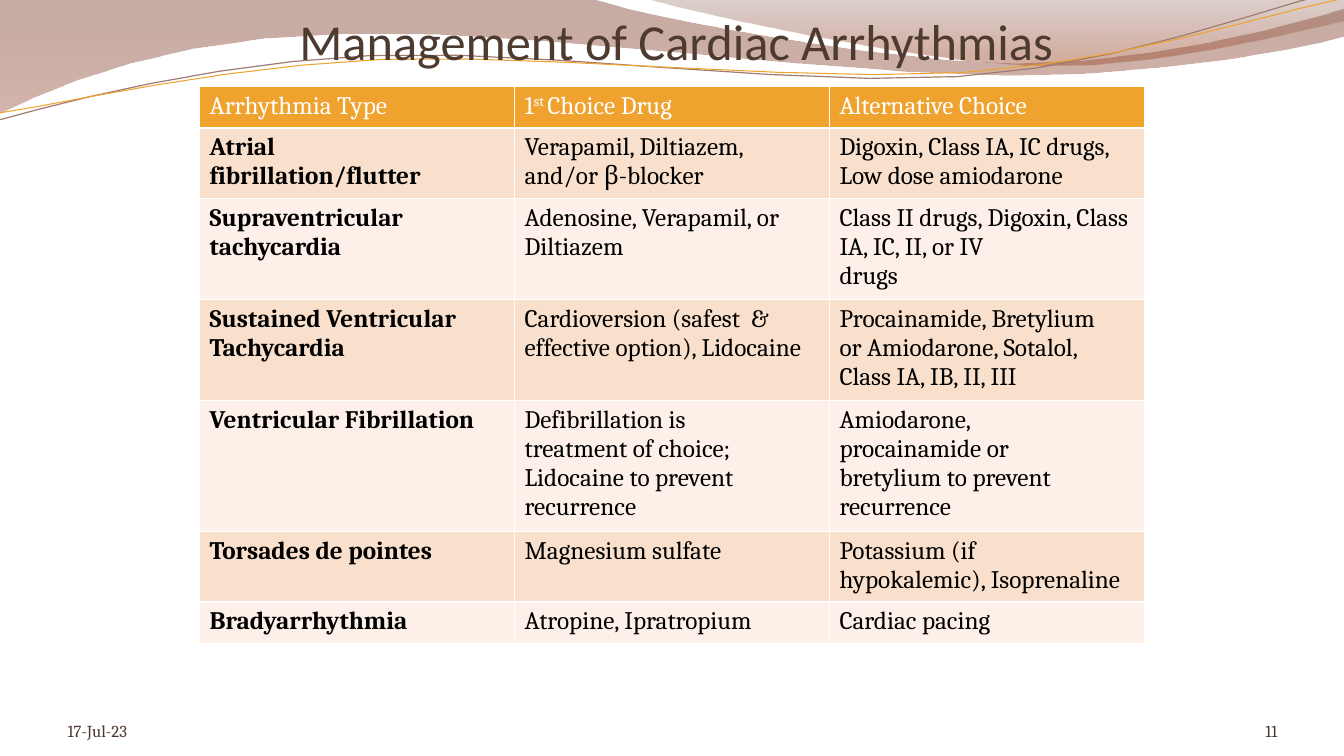
from lxml.etree import SubElement
from pptx import Presentation
from pptx.dml.color import RGBColor
from pptx.enum.text import MSO_ANCHOR, PP_ALIGN
from pptx.oxml.ns import qn
from pptx.util import Inches, Pt

WHITE = RGBColor(0xFF, 0xFF, 0xFF)
BLACK = RGBColor(0x00, 0x00, 0x00)
ORANGE = RGBColor(0xF0, 0xA2, 0x2E)
PEACH = RGBColor(0xF9, 0xE0, 0xCD)
CREAM = RGBColor(0xFC, 0xF0, 0xE8)
TITLE_BROWN = RGBColor(0x4E, 0x3B, 0x30)
FOOTER_BROWN = RGBColor(0x4B, 0x38, 0x2E)
MAUVE = RGBColor(0xA0, 0x7B, 0x71)
DARK_RUST = RGBColor(0x81, 0x47, 0x33)
ROSE = RGBColor(0xB1, 0x76, 0x67)
TAUPE = RGBColor(0x8C, 0x63, 0x59)
RUST = RGBColor(0xA1, 0x51, 0x35)
STEPS = 6  # straight pieces per curve

prs = Presentation()
prs.slide_width, prs.slide_height = Inches(13.33), Inches(7.5)
s = prs.slides.add_slide(prs.slide_layouts[6])


def add_curve(start, segments, close):
    """Draw an outline from line ends (2 numbers) and Bezier curves (6 numbers)."""
    points, (x0, y0) = [], start
    for seg in segments:
        x3, y3 = seg[-2:]
        if len(seg) == 2:
            points.append((x3, y3))
        else:
            x1, y1, x2, y2 = seg[:4]
            for i in range(1, STEPS + 1):
                t = i / STEPS
                a, b, c, d = (1 - t) ** 3, 3 * t * (1 - t) ** 2, 3 * t * t * (1 - t), t ** 3
                points.append((a * x0 + b * x1 + c * x2 + d * x3,
                               a * y0 + b * y1 + c * y2 + d * y3))
        x0, y0 = x3, y3
    builder = s.shapes.build_freeform(Inches(start[0]), Inches(start[1]))
    builder.add_line_segments([(Inches(x), Inches(y)) for x, y in points], close=close)
    sp = builder.convert_to_shape()
    sp.shadow.inherit = False
    return sp


def add_text(text, left, top, width, height, font, size, color, align):
    sp = s.shapes.add_textbox(Inches(left), Inches(top), Inches(width), Inches(height))
    tf = sp.text_frame
    tf.word_wrap = True
    tf.vertical_anchor = MSO_ANCHOR.BOTTOM
    tf.margin_left = tf.margin_right = tf.margin_top = tf.margin_bottom = 0
    tf.text = text
    p = tf.paragraphs[0]
    p.alignment = align
    f = p.runs[0].font
    f.name, f.size, f.color.rgb = font, Pt(size), color
    return tf


# Translucent waves: start, segments, gradient stops (position, colour, opacity %)
waves = [
    ((0, 0), [(5.87, -0.01), (6.34, 0.17, 8.85, 0.63, 10.11, 0.63),
              (11.38, 0.63, 12.78, 0.26, 13.33, 0.09), (13.35, 0.36),
              (13.11, 0.44, 11.6, 0.76, 9.94, 0.75),
              (8.29, 0.75, 5.09, 0.28, 3.43, 0.34),
              (1.72, 0.36, 0.61, 0.83, -0.01, 1.13)],
     [(0, DARK_RUST, 45), (1, ROSE, 55)]),
    ((6.39, -0.01), [(6.79, 0.11, 9.09, 0.62, 10.25, 0.65),
                     (11.41, 0.69, 12.82, 0.32, 13.33, 0.21), (13.33, 0)],
     [(0, TAUPE, 30), (0.8, RUST, 45)]),
]
for start, segments, stops in waves:
    sp = add_curve(start, segments, True)
    sp.line.fill.background()
    sp.fill.gradient()
    sp.fill.gradient_angle = 270
    for stop, (position, color, opacity) in zip(sp.fill.gradient_stops, stops):
        stop.position = position
        stop.color.rgb = color
    for clr, (_, _, opacity) in zip(sp._element.spPr.iter(qn("a:srgbClr")), stops):
        SubElement(clr, qn("a:alpha")).set("val", str(opacity * 1000))

# Thin wave lines
wave_lines = [
    ((-0.01, 1.19), [(0.64, 1.01, 2.11, 0.62, 3.69, 0.55),
                     (5.27, 0.48, 7.9, 0.87, 9.5, 0.76),
                     (11.1, 0.66, 12.52, 0.08, 13.31, -0.1)], MAUVE, 0.85),
    ((0, 1.12), [(0.63, 1.03, 2.18, 0.66, 3.78, 0.59),
                 (5.37, 0.53, 7.96, 0.82, 9.55, 0.72),
                 (11.15, 0.62, 12.55, 0.14, 13.34, -0.02)], ORANGE, 0.75),
]
for start, segments, color, width in wave_lines:
    sp = add_curve(start, segments, False)
    sp.fill.background()
    sp.line.color.rgb = color
    sp.line.width = Pt(width)

# Title
tf = add_text("Management of Cardiac Arrhythmias", 2.21, 0, 9, 0.7,
              "Calibri", 36, TITLE_BROWN, PP_ALIGN.CENTER)
tf.margin_top = Inches(0.05)

# Drug table: the default table style supplies the white borders
rows = [
    ("Arrhythmia Type", "", "Alternative Choice"),
    ("Atrial\nfibrillation/flutter", "Verapamil, Diltiazem, and/or β-blocker",
     "Digoxin, Class IA, IC drugs, Low dose amiodarone"),
    ("Supraventricular\ntachycardia", "Adenosine, Verapamil, or\nDiltiazem",
     "Class II drugs, Digoxin, Class IA, IC, II, or IV\ndrugs"),
    ("Sustained Ventricular\nTachycardia",
     "Cardioversion (safest  & effective option), Lidocaine",
     "Procainamide, Bretylium\nor Amiodarone, Sotalol,\nClass IA, IB, II, III"),
    ("Ventricular Fibrillation",
     "Defibrillation is\ntreatment of choice; Lidocaine to prevent\nrecurrence",
     "Amiodarone,\nprocainamide or\nbretylium to prevent\nrecurrence"),
    ("Torsades de pointes", "Magnesium sulfate",
     "Potassium (if\nhypokalemic), Isoprenaline"),
    ("Bradyarrhythmia", "Atropine, Ipratropium", "Cardiac pacing"),
]
frame = s.shapes.add_table(len(rows), 3, Inches(1.98), Inches(0.86),
                           Inches(9.37), Inches(6.11))
table = frame.table
for row in table.rows:
    row.height = Inches(0.41)
frame.height = Inches(6.11)

# Header with a superscript ordinal
p = table.cell(0, 1).text_frame.paragraphs[0]
for text, baseline in (("1", 0), ("st ", 30000), ("Choice Drug", 0)):
    r = p.add_run()
    r.text = text
    if baseline:
        r.font._element.set("baseline", str(baseline))

for i, row in enumerate(rows):
    for j, text in enumerate(row):
        cell = table.cell(i, j)
        if text:
            cell.text_frame.text = text
        cell.fill.solid()
        cell.fill.fore_color.rgb = ORANGE if i == 0 else PEACH if i % 2 else CREAM
        for p in cell.text_frame.paragraphs:
            for r in p.runs:
                r.font.name, r.font.size = "Cambria", Pt(18)
                r.font.bold = i > 0 and j == 0
                r.font.color.rgb = BLACK if i else WHITE

# Footer
add_text("11", 11.56, 6.95, 1.11, 0.4, "Cambria", 12, FOOTER_BROWN, PP_ALIGN.RIGHT)
add_text("17-Jul-23", 0.67, 6.95, 3.11, 0.4, "Cambria", 12, FOOTER_BROWN, PP_ALIGN.LEFT)

prs.save("out.pptx")
